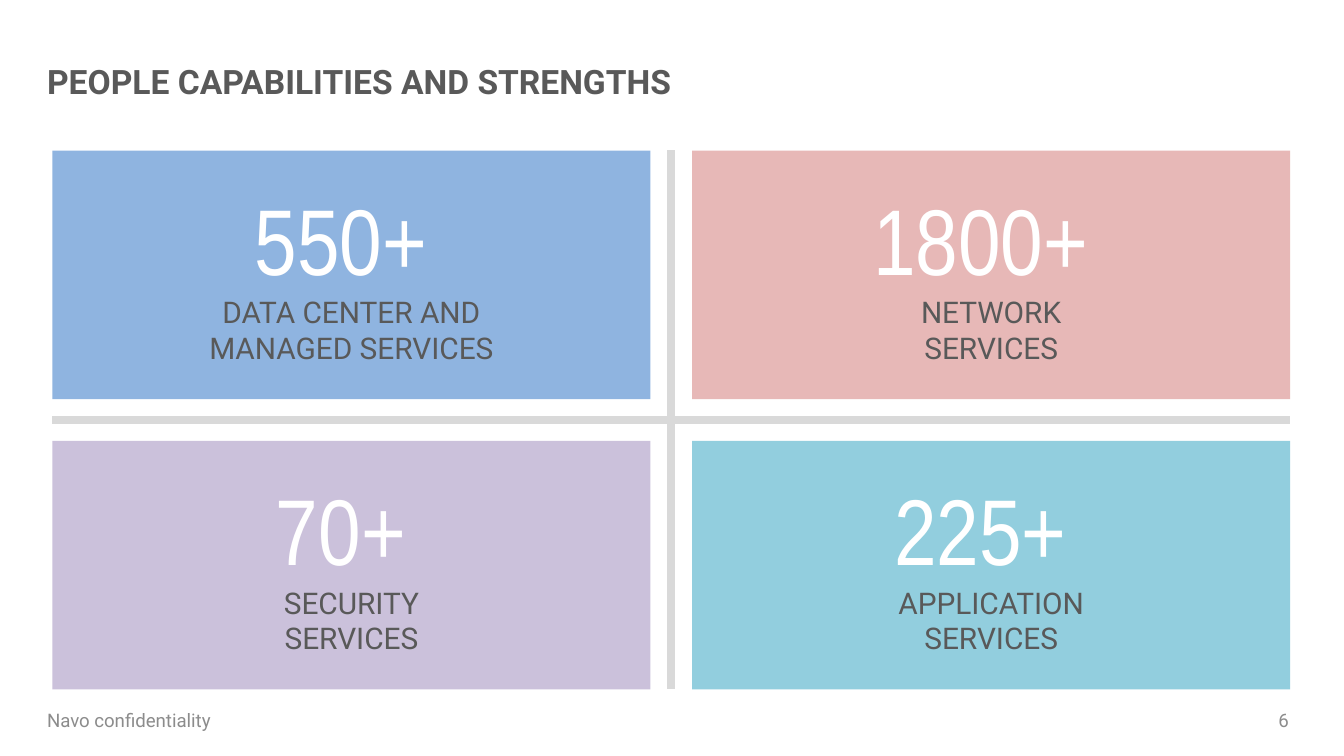
from dataclasses import dataclass

from lxml import etree
from pptx import Presentation
from pptx.dml.color import RGBColor
from pptx.enum import shapes, text
from pptx.oxml import ns
from pptx.util import Inches, Pt


@dataclass(frozen=True)
class Theme:
    ink: str = "595959"
    muted: str = "8C8C8C"
    rule: str = "D9D9D9"
    white: str = "FFFFFF"
    blue: str = "8FB4E0"
    pink: str = "E7B8B7"
    lilac: str = "CBC1DB"
    teal: str = "92CEDE"
    body_font: str = "Roboto"
    figure_font: str = "Arial Narrow"
    title_size: float = 18
    figure_size: float = 50
    label_size: float = 16
    footer_size: float = 10
    rule_width: float = 4.25


@dataclass(frozen=True)
class Box:
    left: float
    top: float
    width: float
    height: float


@dataclass(frozen=True)
class Capability:
    headcount: str
    service: tuple[str, ...]
    fill: str
    column: int
    row: int


THEME = Theme()
SLIDE_WIDTH = 10
SLIDE_HEIGHT = SLIDE_WIDTH * 9 / 16
GRID = Box(0.39, 1.12, 9.21, 4.01)
CARD_WIDTH, CARD_HEIGHT = 4.45, 1.85
COLUMN_STEP = GRID.width - CARD_WIDTH
ROW_STEP = GRID.height - CARD_HEIGHT
COPY_WIDTH, COPY_HEIGHT = 2.62, 1.48

CAPABILITIES = (
    Capability("550+ ", ("DATA CENTER AND MANAGED SERVICES",), THEME.blue, 0, 0),
    Capability("1800+ ", ("NETWORK", "SERVICES"), THEME.pink, 1, 0),
    Capability("70+ ", ("SECURITY", "SERVICES"), THEME.lilac, 0, 1),
    Capability("225+ ", ("APPLICATION", "SERVICES"), THEME.teal, 1, 1),
)


def emu(box: Box) -> tuple:
    return tuple(Inches(v) for v in (box.left, box.top, box.width, box.height))


def add_run(paragraph, words: str, size: float, color: str,
            font: str = THEME.body_font, bold: bool = False) -> None:
    run = paragraph.add_run()
    run.text = words
    run.font.name = font
    run.font.size = Pt(size)
    run.font.bold = bold
    run.font.color.rgb = RGBColor.from_string(color)


def set_frame(frame, left: float, right: float) -> None:
    frame.word_wrap = True
    frame.vertical_anchor = text.MSO_ANCHOR.MIDDLE
    frame.margin_left, frame.margin_right = Inches(left), Inches(right)
    frame.margin_top = frame.margin_bottom = Inches(0.05)


def add_title(slide, words: str) -> None:
    title = slide.shapes.title
    title.left, title.top, title.width, title.height = emu(Box(0.35, 0.4, 8.24, 0.4))
    set_frame(title.text_frame, 0, 0.1)
    heading = title.text_frame.paragraphs[0]
    heading.alignment = text.PP_ALIGN.LEFT
    add_run(heading, words, THEME.title_size, THEME.ink, bold=True)


def add_footer(slide, words: str, box: Box, inset: float, alignment) -> None:
    frame = slide.shapes.add_textbox(*emu(box)).text_frame
    set_frame(frame, inset, 0)
    frame.paragraphs[0].alignment = alignment
    add_run(frame.paragraphs[0], words, THEME.footer_size, THEME.muted)


def add_divider(slide, x1: float, y1: float, x2: float, y2: float) -> None:
    divider = slide.shapes.add_connector(
        shapes.MSO_CONNECTOR.STRAIGHT, Inches(x1), Inches(y1), Inches(x2), Inches(y2))
    divider.line.color.rgb = RGBColor.from_string(THEME.rule)
    divider.line.width = Pt(THEME.rule_width)
    etree.SubElement(divider._element.spPr, ns.qn("a:effectLst"))


def add_card(slide, capability: Capability) -> Box:
    box = Box(GRID.left + capability.column * COLUMN_STEP,
              GRID.top + capability.row * ROW_STEP, CARD_WIDTH, CARD_HEIGHT)
    card = slide.shapes.add_shape(shapes.MSO_SHAPE.RECTANGLE, *emu(box))
    card.shadow.inherit = False
    card.fill.solid()
    card.fill.fore_color.rgb = RGBColor.from_string(capability.fill)
    card.line.fill.background()
    return box


def add_capability(slide, capability: Capability) -> None:
    card = add_card(slide, capability)
    copy_box = Box(card.left + (CARD_WIDTH - COPY_WIDTH) / 2,
                   card.top + (CARD_HEIGHT - COPY_HEIGHT) / 2, COPY_WIDTH, COPY_HEIGHT)
    frame = slide.shapes.add_textbox(*emu(copy_box)).text_frame
    frame.word_wrap = True
    headcount = frame.paragraphs[0]
    headcount.alignment = text.PP_ALIGN.CENTER
    add_run(headcount, capability.headcount, THEME.figure_size, THEME.white,
            THEME.figure_font)
    service = frame.add_paragraph()
    service.alignment = text.PP_ALIGN.CENTER
    for index, words in enumerate(capability.service):
        if index:
            service.add_line_break()
        add_run(service, words, THEME.label_size, THEME.ink)


def main() -> None:
    deck = Presentation()
    deck.slide_width, deck.slide_height = Inches(SLIDE_WIDTH), Inches(SLIDE_HEIGHT)
    slide = deck.slides.add_slide(deck.slide_layouts.get_by_name("Title Only"))
    add_title(slide, "PEOPLE CAPABILITIES AND STRENGTHS")

    right, bottom = GRID.left + GRID.width, GRID.top + GRID.height
    center_x, center_y = GRID.left + GRID.width / 2, GRID.top + GRID.height / 2
    add_divider(slide, center_x, GRID.top, center_x, bottom)
    add_divider(slide, GRID.left, center_y, right, center_y)
    for capability in CAPABILITIES:
        add_capability(slide, capability)

    add_footer(slide, "Navo confidentiality", Box(0.35, 5.21, 1.58, 0.3), 0,
               text.PP_ALIGN.LEFT)
    add_footer(slide, "6", Box(9.06, 5.21, 0.53, 0.3), 0.1, text.PP_ALIGN.RIGHT)
    deck.save("out.pptx")


if __name__ == "__main__":
    main()
